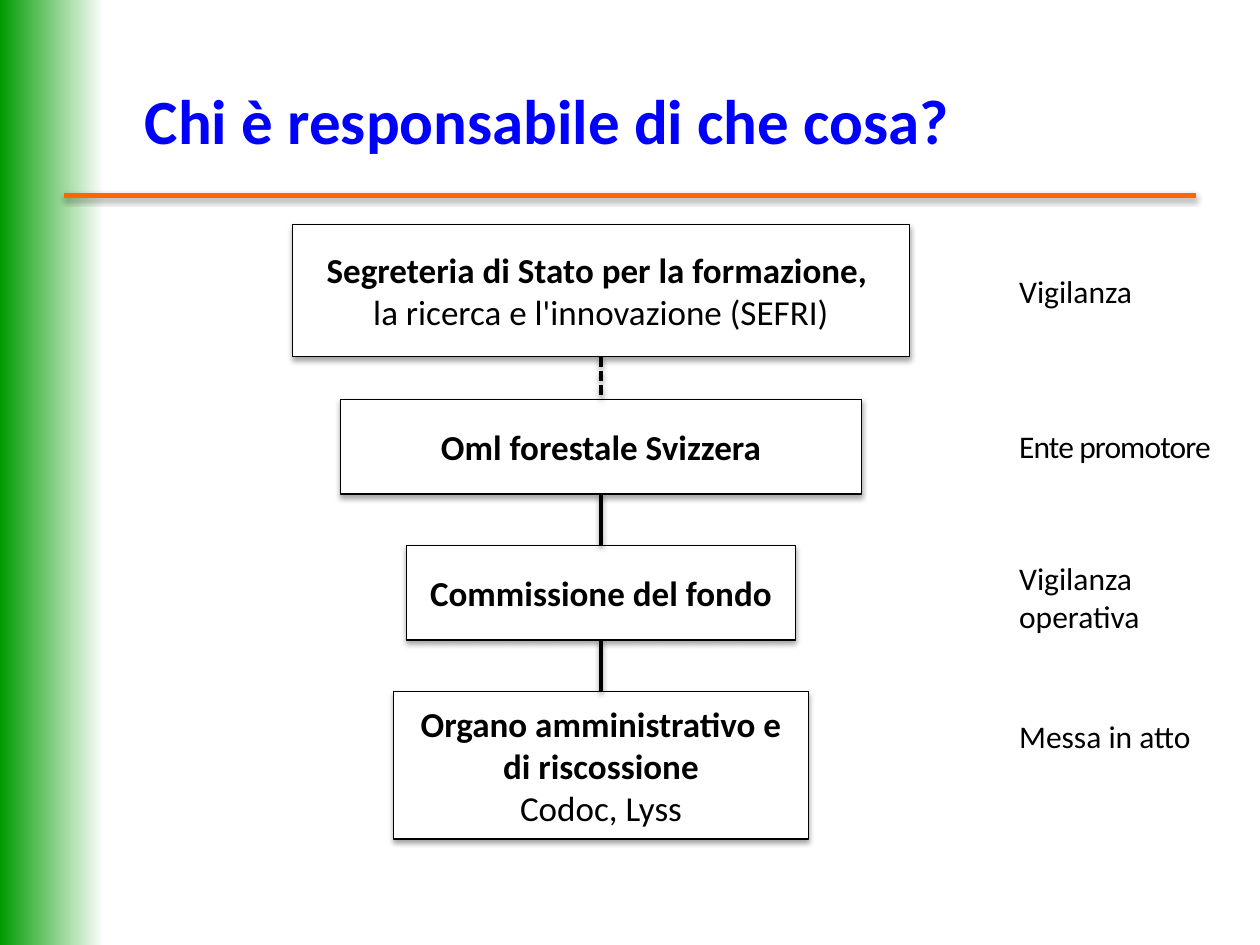
from itertools import pairwise
from lxml.etree import SubElement
from pptx import Presentation
from pptx.dml.color import RGBColor
from pptx.enum.dml import MSO_LINE
from pptx.enum.shapes import MSO_CONNECTOR, MSO_SHAPE
from pptx.enum.text import MSO_ANCHOR, MSO_AUTO_SIZE, PP_ALIGN
from pptx.oxml.ns import qn
from pptx.util import Inches, Pt

BLACK = RGBColor(0, 0, 0)
WHITE = RGBColor(255, 255, 255)
BLUE = RGBColor(0, 0, 255)
GREEN = RGBColor(0, 0x9B, 0)
ORANGE = RGBColor(255, 0x66, 0)
FONT = "Calibri"

TITLE = "Chi è responsabile di che cosa?"
BODIES = [
    (1.78, 4.9, 1.05, [[("Segreteria di Stato per la formazione, \vla ricerca e l'innovazione ", True),
                        ("(SEFRI)", False)]]),
    (3.17, 4.14, 0.75, [[("Oml forestale Svizzera", True)]]),
    (4.33, 3.09, 0.75, [[("Commissione del fondo", True)]]),
    (5.49, 3.29, 1.17, [[("Organo amministrativo e di riscossione", True)],
                        [("Codoc, Lyss", False)]]),
]
ROLES = [
    (2.11, 1.42, 0.4, "Vigilanza", 0),
    (3.34, 1.81, 0.4, "Ente promotore", -50),
    (4.39, 1.42, 0.71, "Vigilanza operativa", 0),
    (5.64, 1.57, 0.4, "Messa in atto", 0),
]
AXIS = 4.77
ROLE_X = 7.99


def style(run, size, color=BLACK, bold=False):
    font = run.font
    font.name, font.size, font.bold = FONT, Pt(size), bold
    font.color.rgb = color


def shade(shape, alpha, dist):
    effects = SubElement(shape._element.spPr, qn("a:effectLst"))
    outer = SubElement(effects, qn("a:outerShdw"), blurRad=str(Pt(3.1)),
                       dist=str(Pt(dist)), dir="5400000", rotWithShape="0")
    tint = SubElement(outer, qn("a:srgbClr"), val=str(BLACK))
    SubElement(tint, qn("a:alpha"), val=str(alpha * 1000))


def add_line(shapes, start, end, color, width):
    line = shapes.add_connector(MSO_CONNECTOR.STRAIGHT, *map(Inches, start + end))
    line.line.color.rgb = color
    line.line.width = Pt(width)
    return line


def add_body(shapes, top, width, height, paras):
    box = shapes.add_shape(MSO_SHAPE.FLOWCHART_PROCESS, Inches(AXIS - width / 2),
                           Inches(top), Inches(width), Inches(height))
    box.fill.solid()
    box.fill.fore_color.rgb = WHITE
    box.line.color.rgb = BLACK
    box.line.width = Pt(0.75)
    shade(box, 35, 1.8)
    frame = box.text_frame
    frame.word_wrap = True
    frame.vertical_anchor = MSO_ANCHOR.MIDDLE
    for i, parts in enumerate(paras):
        para = frame.add_paragraph() if i else frame.paragraphs[0]
        para.alignment = PP_ALIGN.CENTER
        for j, (text, bold) in enumerate(parts):
            if j:
                para.add_run().text = text
            else:
                para.text = text
            for run in para.runs[j:]:
                style(run, 20, bold=bold)
    return box


def add_role(shapes, top, width, height, text, gap):
    box = shapes.add_textbox(*map(Inches, (ROLE_X, top, width, height)))
    frame = box.text_frame
    frame.word_wrap = True
    frame.auto_size = MSO_AUTO_SIZE.SHAPE_TO_FIT_TEXT
    frame.text = text
    run = frame.paragraphs[0].runs[0]
    style(run, 18)
    if gap:
        run.font._element.set("spc", str(gap))


def main():
    deck = Presentation()
    deck.slide_width, deck.slide_height = Inches(10), Inches(7.5)
    slide = deck.slides.add_slide(deck.slide_layouts[5])
    shapes = slide.shapes

    band = shapes.add_shape(MSO_SHAPE.RECTANGLE, 0, 0, Inches(0.83), deck.slide_height)
    band.shadow.inherit = False
    band.line.fill.background()
    band.fill.gradient()
    band.fill.gradient_angle = 0
    for stop, color, place in zip(band.fill.gradient_stops, (GREEN, WHITE), (0, 1)):
        stop.color.rgb, stop.position = color, place

    shade(add_line(shapes, (0.51, 1.55), (9.49, 1.55), ORANGE, 3), 38, 1.6)

    title = shapes.title
    title.left, title.top, title.width, title.height = map(Inches, (1.05, 0.6, 8.59, 0.87))
    frame = title.text_frame
    frame.text = TITLE
    frame.auto_size = MSO_AUTO_SIZE.NONE
    frame.vertical_anchor = MSO_ANCHOR.TOP
    frame.paragraphs[0].alignment = PP_ALIGN.LEFT
    style(frame.paragraphs[0].runs[0], 36, BLUE, True)

    boxes = [add_body(shapes, *body) for body in BODIES]
    for i, (upper, lower) in enumerate(pairwise(boxes)):
        link = add_line(shapes, (AXIS, 0), (AXIS, 1), BLACK, 2)
        link.begin_connect(upper, 2)
        link.end_connect(lower, 0)
        if i == 0:
            link.line.dash_style = MSO_LINE.SQUARE_DOT
        shade(link, 38, 1.6)

    for role in ROLES:
        add_role(shapes, *role)
    deck.save("out.pptx")


if __name__ == "__main__":
    main()
